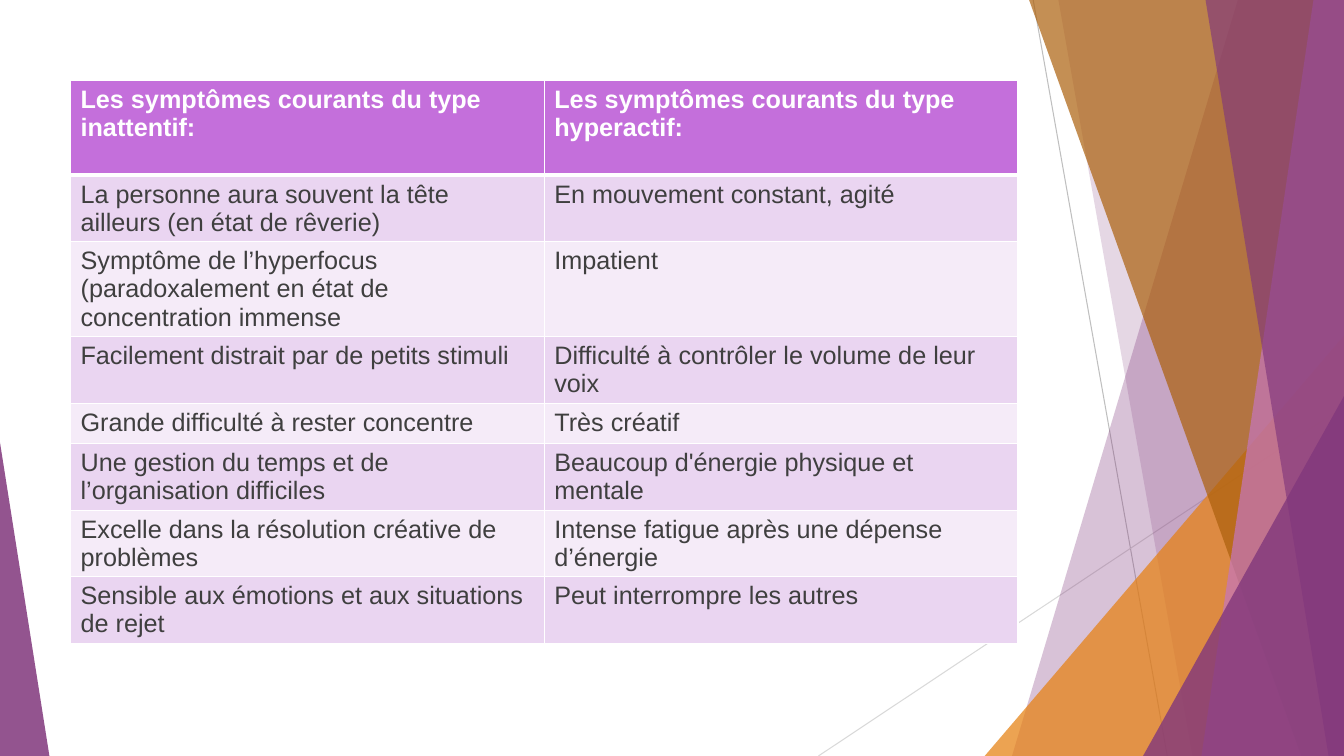
from lxml.etree import SubElement
from pptx import Presentation
from pptx.dml.color import RGBColor
from pptx.enum.shapes import MSO_CONNECTOR, MSO_SHAPE
from pptx.oxml import parse_xml
from pptx.oxml.ns import nsdecls, qn
from pptx.util import Pt

WIDTH, HEIGHT = 960, 540
WHITE = RGBColor(0xFF, 0xFF, 0xFF)
TEXT_GREY = RGBColor(0x3F, 0x3F, 0x3F)
LINE_GREY = RGBColor(0xBF, 0xBF, 0xBF)
LINE_LIGHT = RGBColor(0xD9, 0xD9, 0xD9)
PURPLE = RGBColor(0x81, 0x37, 0x7C)
PINK = RGBColor(0xC5, 0x76, 0xBF)
ORANGE = RGBColor(0xE6, 0x80, 0x10)
BROWN = RGBColor(0xAC, 0x60, 0x0C)
HEADER_FILL = RGBColor(0xC4, 0x6F, 0xDB)
ROW_FILLS = (RGBColor(0xF5, 0xEB, 0xF8), RGBColor(0xEA, 0xD5, 0xF1))

SYMPTOMS = [
    ("Les symptômes courants du type inattentif:",
     "Les symptômes courants du type hyperactif:"),
    ("La personne aura souvent la tête ailleurs (en état de rêverie)",
     "En mouvement constant, agité"),
    ("Symptôme de l’hyperfocus (paradoxalement en état de concentration immense",
     "Impatient"),
    ("Facilement distrait par de petits stimuli",
     "Difficulté à contrôler le volume de leur voix"),
    ("Grande difficulté à rester concentre", "Très créatif"),
    ("Une gestion du temps et de l’organisation difficiles",
     "Beaucoup d'énergie physique et mentale"),
    ("Excelle dans la résolution créative de problèmes",
     "Intense fatigue après une dépense d’énergie"),
    ("Sensible aux émotions et aux situations de rejet",
     "Peut interrompre les autres"),
]
ROW_HEIGHTS = (67.5, 47.5, 67.8, 47.5, 29, 47.5, 47.5, 47.5)


class SlideBuilder:
    font_name = "Arial"
    font_size = 18

    def __init__(self, slide):
        self.slide = slide

    def line(self, start, end, color):
        connector = self.slide.shapes.add_connector(
            MSO_CONNECTOR.STRAIGHT, *(Pt(value) for value in start + end))
        connector.line.color.rgb = color
        connector.line.width = Pt(0.75)
        SubElement(connector._element.spPr, qn("a:effectLst"))

    def paint(self, shape, color, opacity):
        shape.shadow.inherit = False
        shape.line.fill.background()
        shape.fill.solid()
        shape.fill.fore_color.rgb = color
        color_element = shape._element.spPr.find(qn("a:solidFill"))[0]
        SubElement(color_element, qn("a:alpha"), val=str(opacity * 1000))

    def band(self, top_left, bottom_left, color, opacity):
        """Draw a full-height band from a slanted left side to the slide's right edge."""
        builder = self.slide.shapes.build_freeform(Pt(top_left), 0)
        corners = [(WIDTH, 0), (WIDTH, HEIGHT), (bottom_left, HEIGHT)]
        builder.add_line_segments([(Pt(x), Pt(y)) for x, y in corners])
        self.paint(builder.convert_to_shape(), color, opacity)

    def triangle(self, left, top, width, apex, color, opacity):
        """Draw a triangle standing on the slide's bottom edge."""
        shape = self.slide.shapes.add_shape(
            MSO_SHAPE.ISOSCELES_TRIANGLE,
            Pt(left), Pt(top), Pt(width), Pt(HEIGHT - top))
        shape.adjustments[0] = apex
        self.paint(shape, color, opacity)

    def cell_borders(self, cell, top, bottom):
        properties = cell._tc.get_or_add_tcPr()
        widths = {"lnL": 1, "lnR": 1, "lnT": top, "lnB": bottom}
        for index, (side, width) in enumerate(widths.items()):
            properties.insert(index, parse_xml(
                f'<a:{side} {nsdecls("a")} w="{Pt(width)}"><a:solidFill>'
                f'<a:srgbClr val="{WHITE}"/></a:solidFill></a:{side}>'))

    def table(self, left, top, column_width, row_heights, rows):
        columns = len(rows[0])
        table = self.slide.shapes.add_table(
            len(rows), columns, Pt(left), Pt(top),
            Pt(column_width * columns), Pt(sum(row_heights))).table
        for column in table.columns:
            column.width = Pt(column_width)
        for row_index, texts in enumerate(rows):
            table.rows[row_index].height = Pt(row_heights[row_index])
            is_header = row_index == 0
            for column_index, text in enumerate(texts):
                cell = table.cell(row_index, column_index)
                cell.fill.solid()
                cell.fill.fore_color.rgb = (
                    HEADER_FILL if is_header else ROW_FILLS[row_index % 2])
                self.cell_borders(cell, 3 if row_index == 1 else 1,
                                  3 if is_header else 1)
                run = cell.text_frame.paragraphs[0].add_run()
                run.text = text
                run.font.name = self.font_name
                run.font.size = Pt(self.font_size)
                run.font.bold = is_header
                run.font.color.rgb = WHITE if is_header else TEXT_GREY


def main():
    presentation = Presentation()
    presentation.slide_width, presentation.slide_height = Pt(WIDTH), Pt(HEIGHT)
    builder = SlideBuilder(
        presentation.slides.add_slide(presentation.slide_layouts[6]))

    builder.line((738, 0), (833.8, HEIGHT), LINE_GREY)
    builder.line((WIDTH, 290.2), (584.6, HEIGHT), LINE_LIGHT)
    builder.band(884.2, 722.9, PURPLE, 30)
    builder.band(756, 851.8, PURPLE, 20)
    builder.triangle(703.4, 239.8, 256.6, 1, ORANGE, 72)
    builder.band(735.1, 929.5, BROWN, 70)
    builder.band(938.2, 858.2, PINK, 70)
    builder.band(861.1, 949, PURPLE, 65)
    builder.triangle(816.5, 283, 143.5, 1, PURPLE, 80)
    builder.triangle(0, 316.1, 35.3, 0, PURPLE, 85)
    builder.table(50.4, 57.6, 338.4, ROW_HEIGHTS, SYMPTOMS)

    presentation.save("out.pptx")


if __name__ == "__main__":
    main()
